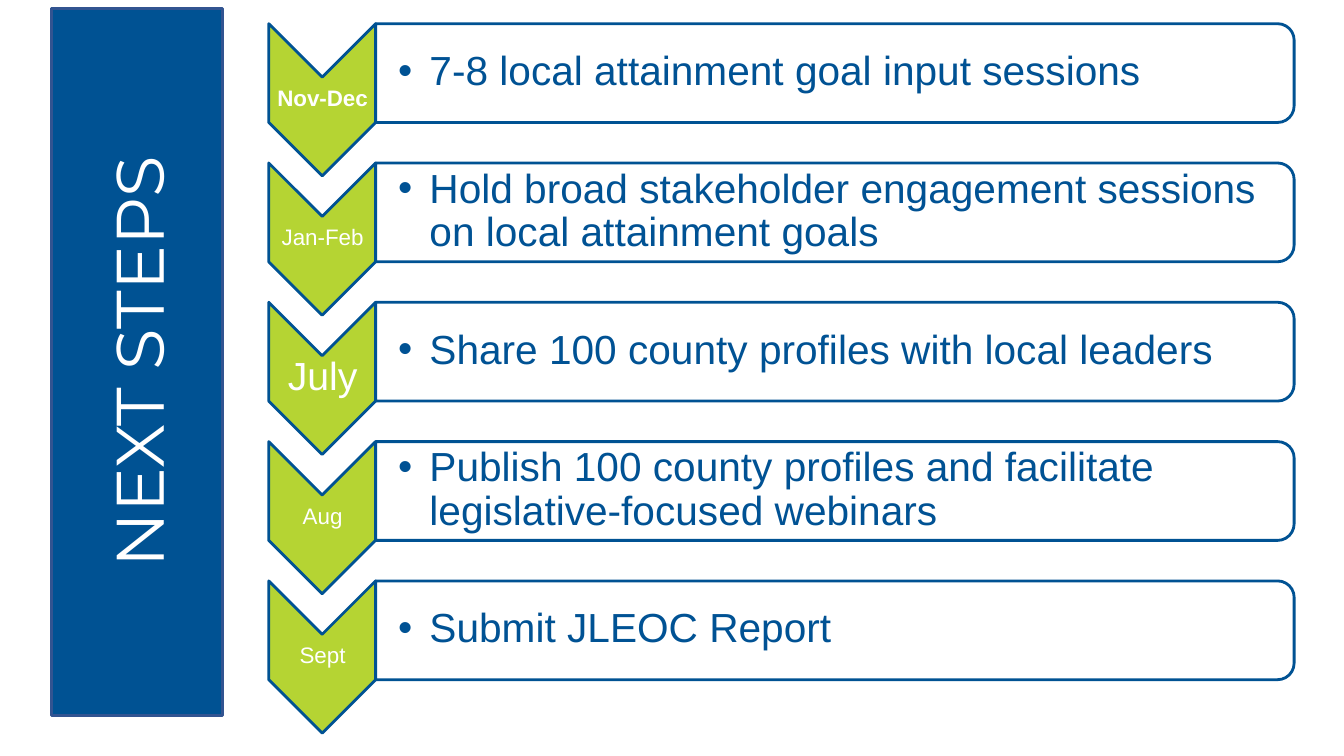
"""Build the Next Steps timeline slide."""
from dataclasses import dataclass

from lxml.etree import SubElement
from pptx import Presentation
from pptx.dml.color import RGBColor
from pptx.enum.shapes import MSO_SHAPE
from pptx.enum.text import MSO_ANCHOR, PP_ALIGN
from pptx.oxml.ns import qn
from pptx.util import Inches, Pt

TITLE = "NEXT STEPS"
STEPS = [
    ("Nov-Dec", 16, True, "7-8 local attainment goal input sessions"),
    ("Jan-Feb", 16, False, "Hold broad stakeholder engagement sessions on local attainment goals"),
    ("July", 28, False, "Share 100 county profiles with local leaders"),
    ("Aug", 16, False, "Publish 100 county profiles and facilitate legislative-focused webinars"),
    ("Sept", 16, False, "Submit JLEOC Report"),
]


@dataclass(frozen=True)
class Theme:
    navy: str = "005293"
    ink: str = "005294"
    edge: str = "325491"
    lime: str = "B5D433"
    white: str = "FFFFFF"
    body: str = "Arial"
    head: str = "Montserrat"
    title: int = 48
    goal: int = 29
    line: int = 2


THEME = Theme()
PITCH = 1.382
MONTH_X, MONTH_Y = 3.195, 0.99
GOAL_X, GOAL_Y = 8.28, 0.725


def rgb(code):
    return RGBColor.from_string(code)


def add_turned(slide, kind, mid, size, turn, fill, edge):
    (x, y), (w, h) = mid, size
    shape = slide.shapes.add_shape(
        kind, Inches(x - w / 2), Inches(y - h / 2), Inches(w), Inches(h))
    shape.rotation = turn
    shape.shadow.inherit = False
    shape.fill.solid()
    shape.fill.fore_color.rgb = rgb(fill)
    shape.line.color.rgb = rgb(edge)
    shape.line.width = Pt(THEME.line)
    return shape


def add_run(para, text, font, size, color, bold=False):
    run = para.add_run()
    run.text = text
    run.font.name = font
    run.font.size = Pt(size)
    run.font.bold = bold
    run.font.color.rgb = rgb(color)


def add_label(slide, box, left, pad):
    label = slide.shapes.add_textbox(*map(Inches, box))
    frame = label.text_frame
    frame.word_wrap = True
    frame.vertical_anchor = MSO_ANCHOR.MIDDLE
    frame.margin_left = Inches(left)
    frame.margin_right = frame.margin_top = frame.margin_bottom = Inches(pad)
    para = frame.paragraphs[0]
    para.line_spacing = 0.9
    return para


def add_bullet(para):
    props = para._p.get_or_add_pPr()
    props.set("marL", str(Inches(0.31)))
    props.set("indent", str(Inches(-0.31)))
    SubElement(props, qn("a:buFont"), typeface=THEME.body)
    SubElement(props, qn("a:buChar"), char="•")


def add_step(slide, row, month, size, bold, goal):
    drop = row * PITCH
    add_turned(slide, MSO_SHAPE.CHEVRON, (MONTH_X, MONTH_Y + drop),
               (1.51, 1.06), 90, THEME.lime, THEME.navy)
    para = add_label(slide, (2.67, 0.76 + drop, 1.06, 0.45), 0.01, 0.01)
    para.alignment = PP_ALIGN.CENTER
    add_run(para, month, THEME.body, size, THEME.white, bold)

    add_turned(slide, MSO_SHAPE.ROUND_2_SAME_RECTANGLE, (GOAL_X, GOAL_Y + drop),
               (0.98, 9.11), 90, THEME.white, THEME.navy)
    para = add_label(slide, (3.72, 0.28 + drop, 9.06, 0.88), 0.23, 0.02)
    add_bullet(para)
    add_run(para, goal, THEME.body, THEME.goal, THEME.ink)


def add_title(slide):
    panel = add_turned(slide, MSO_SHAPE.RECTANGLE, (1.36, 3.59),
                       (7.01, 1.7), 270, THEME.navy, THEME.edge)
    panel.text_frame.vertical_anchor = MSO_ANCHOR.MIDDLE
    para = panel.text_frame.paragraphs[0]
    para.alignment = PP_ALIGN.CENTER
    add_run(para, TITLE, THEME.head, THEME.title, THEME.white)


def main():
    deck = Presentation()
    deck.slide_width, deck.slide_height = Inches(13.33), Inches(7.5)
    slide = deck.slides.add_slide(deck.slide_layouts[6])
    for row, step in enumerate(STEPS):
        add_step(slide, row, *step)
    add_title(slide)
    deck.save("out.pptx")


if __name__ == "__main__":
    main()
